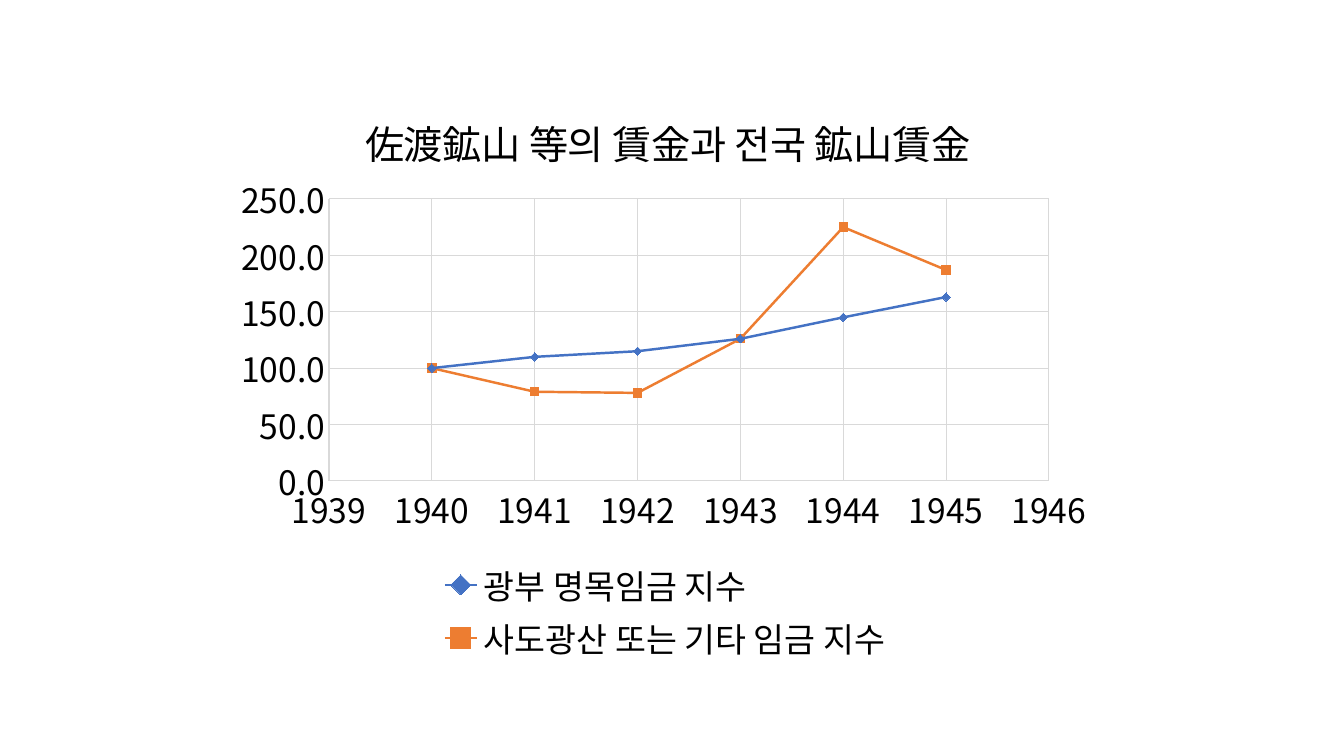
from dataclasses import dataclass

from lxml.etree import SubElement
from pptx import Presentation
from pptx.chart.axis import ValueAxis
from pptx.chart.data import XyChartData
from pptx.chart.series import XySeries
from pptx.dml.color import RGBColor
from pptx.enum.chart import (
    XL_CHART_TYPE,
    XL_LEGEND_POSITION,
    XL_MARKER_STYLE,
    XL_TICK_MARK,
)
from pptx.oxml.ns import qn
from pptx.oxml.xmlchemy import BaseOxmlElement
from pptx.util import Emu, Pt

BLACK = RGBColor(0x00, 0x00, 0x00)
GRAY = RGBColor(0xD9, 0xD9, 0xD9)
BLUE = RGBColor(0x44, 0x72, 0xC4)
ORANGE = RGBColor(0xED, 0x7D, 0x31)
BODY_FONT = "Noto Sans CJK KR"
TITLE_FONT = "Noto Sans CJK JP"
TITLE = "佐渡鉱山 等의 賃金과 전국 鉱山賃金"
FIRST_YEAR = 1940


@dataclass(frozen=True)
class Box:
    x: int
    y: int
    w: int
    h: int


@dataclass(frozen=True)
class WageIndex:
    name: str
    values: tuple[int, ...]
    color: RGBColor
    marker: XL_MARKER_STYLE


@dataclass(frozen=True)
class Scale:
    low: int
    high: int
    step: int
    number_format: str


CHART = Box(224, 80, 881, 590)
PLOT = Box(329, 199, 720, 282)
TITLE_BOX = Box(358, 103, 612, 57)
LEGEND = Box(440, 556, 450, 111)
YEARS = Scale(1939, 1946, 1, "General")
INDEX = Scale(0, 250, 50, "0.0")
WAGES = (
    WageIndex("광부 명목임금 지수", (100, 110, 115, 126, 145, 163),
              BLUE, XL_MARKER_STYLE.DIAMOND),
    WageIndex("사도광산 또는 기타 임금 지수", (100, 79, 78, 126, 225, 187),
              ORANGE, XL_MARKER_STYLE.SQUARE),
)


def px(n: int) -> Emu:
    return Emu(round(n * 914400 / 100.8))


def place(parent: BaseOxmlElement, index: int, box: Box,
          inner: bool = False, sized: bool = True) -> None:
    for old in parent.findall(qn("c:layout")):
        parent.remove(old)
    layout = parent.makeelement(qn("c:layout"))
    parent.insert(index, layout)
    manual = SubElement(layout, qn("c:manualLayout"))
    values = {"layoutTarget": "inner"} if inner else {}
    values |= {"xMode": "edge", "yMode": "edge",
               "x": f"{(box.x - CHART.x) / CHART.w:.4f}",
               "y": f"{(box.y - CHART.y) / CHART.h:.4f}"}
    if sized:
        values |= {"w": f"{box.w / CHART.w:.4f}", "h": f"{box.h / CHART.h:.4f}"}
    for tag, value in values.items():
        SubElement(manual, qn(f"c:{tag}")).set("val", value)


def style_axis(axis: ValueAxis, scale: Scale) -> None:
    axis.minimum_scale = scale.low
    axis.maximum_scale = scale.high
    axis.major_unit = scale.step
    axis.has_title = False
    axis.major_tick_mark = XL_TICK_MARK.NONE
    axis.minor_tick_mark = XL_TICK_MARK.NONE
    axis.has_major_gridlines = True
    axis.tick_labels.number_format = scale.number_format
    axis.tick_labels.number_format_is_linked = False
    for line in (axis.format.line, axis.major_gridlines.format.line):
        line.color.rgb = GRAY
        line.width = Pt(0.75)


def style_series(series: XySeries, wage: WageIndex) -> None:
    series.format.line.color.rgb = wage.color
    series.format.line.width = Pt(1.75)
    marker = series.marker
    marker.style = wage.marker
    marker.size = 6
    marker.format.fill.solid()
    marker.format.fill.fore_color.rgb = wage.color
    marker.format.line.color.rgb = wage.color


def main() -> None:
    prs = Presentation()
    prs.slide_width, prs.slide_height = px(1344), px(756)
    s = prs.slides.add_slide(prs.slide_layouts[6])

    data = XyChartData()
    for wage in WAGES:
        series = data.add_series(wage.name)
        for year, value in enumerate(wage.values, FIRST_YEAR):
            series.add_data_point(year, value)
    chart = s.shapes.add_chart(
        XL_CHART_TYPE.XY_SCATTER_LINES,
        px(CHART.x), px(CHART.y), px(CHART.w), px(CHART.h), data,
    ).chart

    chart.font.name = BODY_FONT
    chart.font.size = Pt(24)
    chart.font.color.rgb = BLACK
    chart.plots[0].vary_by_categories = False

    chart.has_title = True
    tf = chart.chart_title.text_frame
    tf.text = TITLE
    r = tf.paragraphs[0].runs[0]
    r.font.name = TITLE_FONT
    r.font.size = Pt(28)
    r.font.bold = False
    r.font.color.rgb = BLACK
    chart.chart_title.include_in_layout = False

    chart.has_legend = True
    chart.legend.position = XL_LEGEND_POSITION.BOTTOM
    chart.legend.include_in_layout = False

    style_axis(chart.category_axis, YEARS)
    style_axis(chart.value_axis, INDEX)
    for series, wage in zip(chart.plots[0].series, WAGES):
        style_series(series, wage)
        series.smooth = False

    root = chart.element.find(qn("c:chart"))
    place(root.find(qn("c:title")), 1, TITLE_BOX, sized=False)
    place(root.find(qn("c:plotArea")), 0, PLOT, inner=True)
    place(root.find(qn("c:legend")), 1, LEGEND)
    for latin in list(chart.element.iter(qn("a:latin"))):
        ea = latin.makeelement(qn("a:ea"), {"typeface": latin.get("typeface")})
        latin.addnext(ea)

    prs.save("out.pptx")


if __name__ == "__main__":
    main()
